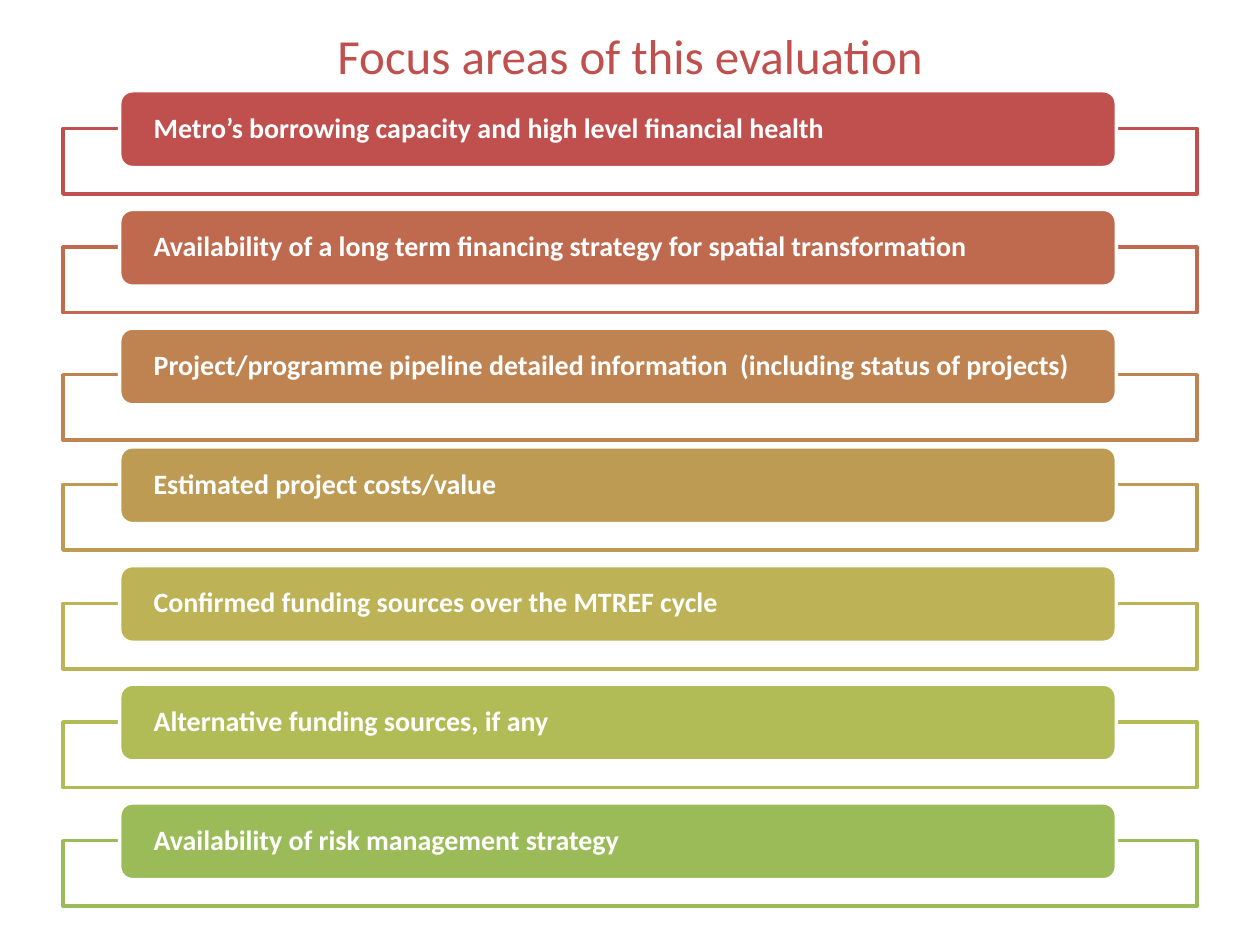
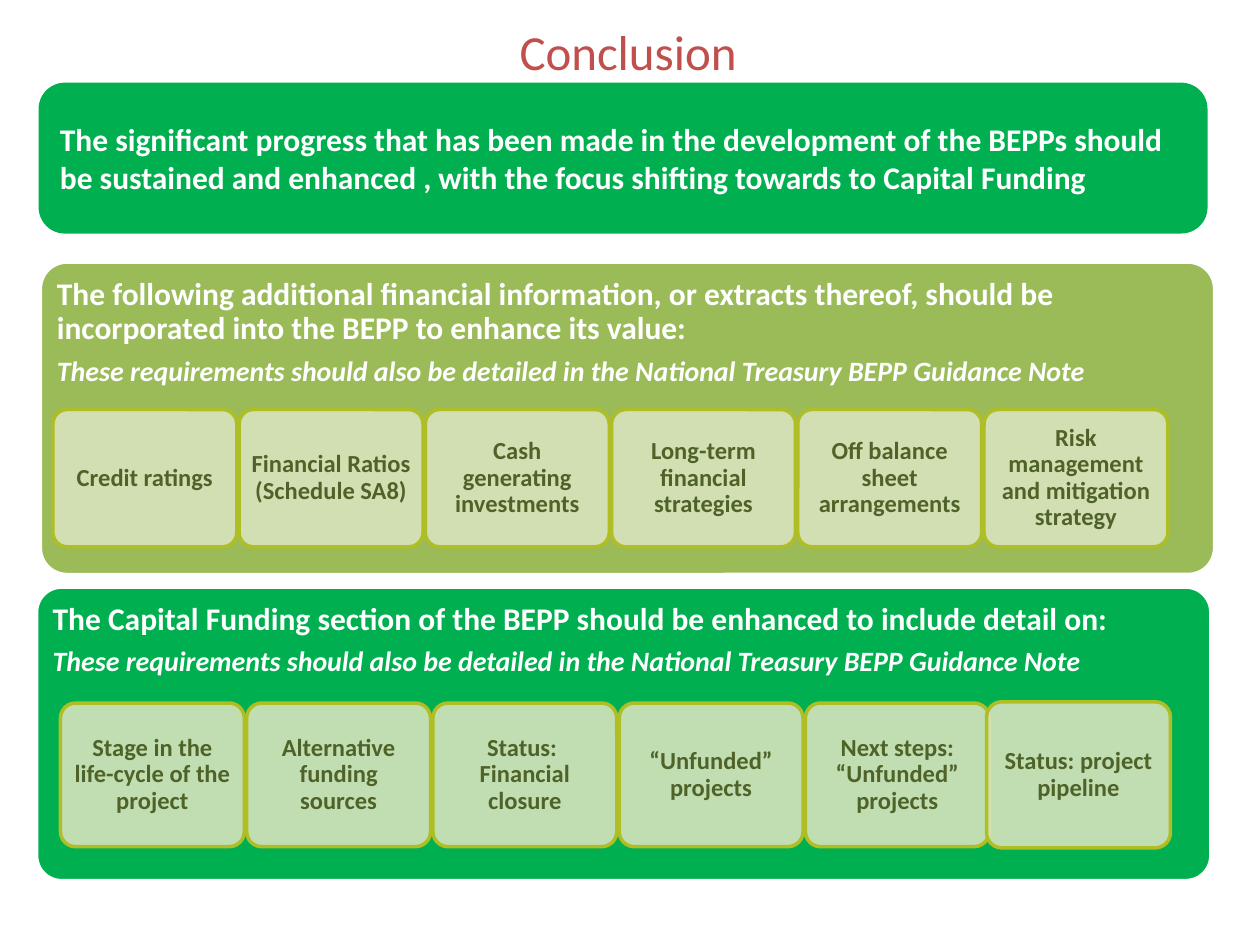
from lxml.etree import SubElement
from pptx import Presentation
from pptx.dml.color import RGBColor
from pptx.enum.shapes import MSO_SHAPE
from pptx.enum.text import MSO_ANCHOR, MSO_AUTO_SIZE, PP_ALIGN
from pptx.oxml.ns import qn
from pptx.util import Inches, Pt

COLOURS = {
    "title": "C0504D",
    "white": "FFFFFF",
    "green": "00B050",
    "olive": "9BBB59",
    "card": "D7E4BD",
    "card_line": "AFBE24",
    "card_text": "4F6228",
}
FOCUS_AREAS = [
    ("Metro’s borrowing capacity and high level financial health", "C0504D"),
    ("Availability of a long term financing strategy for spatial transformation", "BF6A4F"),
    ("Project/programme pipeline detailed information  (including status of projects)", "BE8351"),
    ("Estimated project costs/value", "BD9B53"),
    ("Confirmed funding sources over the MTREF cycle", "BDB255"),
    ("Alternative funding sources, if any", "B1BC57"),
    ("Availability of risk management strategy", "9BBB59"),
]
FRAME_DROPS = {2: 0.37}
PROGRESS = (
    "The significant progress that has been made in the development of the BEPPs should "
    "be sustained and enhanced , with the focus shifting towards to Capital Funding"
)
GUIDANCE = "These requirements should also be detailed in the National Treasury BEPP Guidance Note"
INFORMATION = (
    "The following additional financial information, or extracts thereof, should be "
    "incorporated into the BEPP to enhance its value:"
)
INFORMATION_CARDS = [
    "Credit ratings",
    "Financial Ratios (Schedule SA8)",
    "Cash generating investments",
    "Long-term financial strategies",
    "Off balance sheet arrangements",
    "Risk management and mitigation strategy",
]
FUNDING = "The Capital Funding section of the BEPP should be enhanced to include detail on:"
FUNDING_CARDS = [
    "Stage in the life-cycle of the project",
    "Alternative funding sources",
    "Status:  Financial closure",
    "“Unfunded” projects",
    "Next steps: “Unfunded” projects",
    "Status: project pipeline",
]
BODY_SPACING = {"line_spacing": 0.9, "space_after": Pt(6)}


def set_attributes(target, values):
    """Set every named attribute on the target."""
    for name, value in values.items():
        setattr(target, name, value)


def format_frame(shape, horizontal, vertical, anchor):
    """Set the margins, wrapping and anchor of a shape's text."""
    set_attributes(shape.text_frame, {
        "margin_left": Inches(horizontal), "margin_right": Inches(horizontal),
        "margin_top": Inches(vertical), "margin_bottom": Inches(vertical),
        "word_wrap": True, "auto_size": MSO_AUTO_SIZE.NONE, "vertical_anchor": anchor,
    })


def write_paragraph(paragraph, text, size, colour, layout, **font_values):
    """Write one formatted run and lay out its paragraph."""
    set_attributes(paragraph, layout)
    run = paragraph.add_run()
    run.text = text
    set_attributes(run.font, {"name": "Calibri", "size": Pt(size), **font_values})
    run.font.color.rgb = RGBColor.from_string(colour)


def add_block(slide, kind, box, fill, line, opacity=None, corner=None):
    """Add a filled and outlined shape without a shadow."""
    shape = slide.shapes.add_shape(kind, *map(Inches, box))
    shape.shadow.inherit = False
    shape.fill.solid()
    shape.fill.fore_color.rgb = RGBColor.from_string(fill)
    shape.line.color.rgb = RGBColor.from_string(line)
    shape.line.width = Pt(2)
    if opacity is not None:
        colour = shape._element.xpath("./p:spPr/a:solidFill/a:srgbClr")[0]
        SubElement(colour, qn("a:alpha"), val=str(opacity * 1000))
    if corner is not None:
        shape.adjustments[0] = corner
    return shape


def add_titled_slide(presentation, text, box):
    """Add a slide with its title set in the shared style."""
    slide = presentation.slides.add_slide(presentation.slide_layouts[5])
    title = slide.shapes.title
    set_attributes(title, dict(zip(("left", "top", "width", "height"), map(Inches, box))))
    format_frame(title, 0, 0, MSO_ANCHOR.TOP)
    write_paragraph(title.text_frame.paragraphs[0], text, 28, COLOURS["title"],
                    {"alignment": PP_ALIGN.CENTER})
    return slide


def add_focus_area(slide, box, text, colour, frame_drop):
    """Add a coloured bar over an open frame at the top of the box."""
    left, top, width = box
    add_block(slide, MSO_SHAPE.RECTANGLE, (left, top + frame_drop, width, 0.52),
              COLOURS["white"], colour, opacity=90)
    bar = add_block(slide, MSO_SHAPE.ROUNDED_RECTANGLE, (left + 0.45, top, 7.91, 0.61),
                    colour, COLOURS["white"])
    format_frame(bar, 0.24, 0, MSO_ANCHOR.MIDDLE)
    write_paragraph(bar.text_frame.paragraphs[0], text, 16, COLOURS["white"],
                    {"alignment": PP_ALIGN.LEFT, **BODY_SPACING}, bold=True)


def add_banner(slide, box, text):
    """Add the opening statement."""
    banner = add_block(slide, MSO_SHAPE.ROUNDED_RECTANGLE, box, COLOURS["green"], COLOURS["green"])
    format_frame(banner, 0.1, 0.05, MSO_ANCHOR.MIDDLE)
    write_paragraph(banner.text_frame.paragraphs[0], text, 18, COLOURS["white"],
                    {"alignment": PP_ALIGN.LEFT}, bold=True)


def add_card(slide, box, text):
    """Add one pale card with centred text."""
    card = add_block(slide, MSO_SHAPE.ROUNDED_RECTANGLE, box, COLOURS["card"],
                     COLOURS["card_line"], opacity=90, corner=0.105)
    format_frame(card, 0.06, 0.06, MSO_ANCHOR.MIDDLE)
    write_paragraph(card.text_frame.paragraphs[0], text, 14, COLOURS["card_text"],
                    {"alignment": PP_ALIGN.CENTER, **BODY_SPACING}, bold=True)


def add_card_panel(slide, box, fill, heading, cards, inset, card_height, last_shift=(0, 0, 0)):
    """Add a panel with a heading, a note and a row of equal cards."""
    left, top, _, _ = box
    panel = add_block(slide, MSO_SHAPE.ROUNDED_RECTANGLE, box, fill, COLOURS["white"], corner=0.085)
    format_frame(panel, 0.07, 0.07, MSO_ANCHOR.TOP)
    layout = {"alignment": PP_ALIGN.LEFT, **BODY_SPACING}
    write_paragraph(panel.text_frame.paragraphs[0], heading, 18, COLOURS["white"], layout, bold=True)
    write_paragraph(panel.text_frame.add_paragraph(), GUIDANCE, 16, COLOURS["white"], layout,
                    bold=True, italic=True)
    for index, text in enumerate(cards):
        shift_x, shift_y, growth = last_shift if index == len(cards) - 1 else (0, 0, 0)
        card_box = (left + inset[0] + index * 1.478 + shift_x, top + inset[1] + shift_y,
                    1.46, card_height + growth)
        add_card(slide, card_box, text)


def build_focus_slide(presentation):
    """Build the list of focus areas."""
    slide = add_titled_slide(presentation, "Focus areas of this evaluation", (0, 0.2, 10, 1.58))
    for index, (text, colour) in enumerate(FOCUS_AREAS):
        add_focus_area(slide, (0.5, 0.72 + index * 0.942, 9), text, colour,
                       FRAME_DROPS.get(index, 0.3))


def build_conclusion_slide(presentation):
    """Build the conclusion with its banner and two card panels."""
    slide = add_titled_slide(presentation, "Conclusion", (0.4, 0.17, 9.17, 1.58))
    add_card_panel(slide, (0.32, 2.08, 9.32, 2.48), COLOURS["olive"], INFORMATION,
                   INFORMATION_CARDS, (0.1, 1.17), 1.09)
    add_banner(slide, (0.32, 0.67, 9.25, 1.17), PROGRESS)
    add_card_panel(slide, (0.29, 4.66, 9.32, 2.33), COLOURS["green"], FUNDING,
                   FUNDING_CARDS, (0.19, 0.92), 1.14, last_shift=(-0.04, -0.01, 0.02))


def main():
    """Build and save the presentation."""
    presentation = Presentation()
    presentation.slide_width = Inches(10)
    presentation.slide_height = Inches(7.5)
    build_focus_slide(presentation)
    build_conclusion_slide(presentation)
    presentation.save("out.pptx")


if __name__ == "__main__":
    main()
